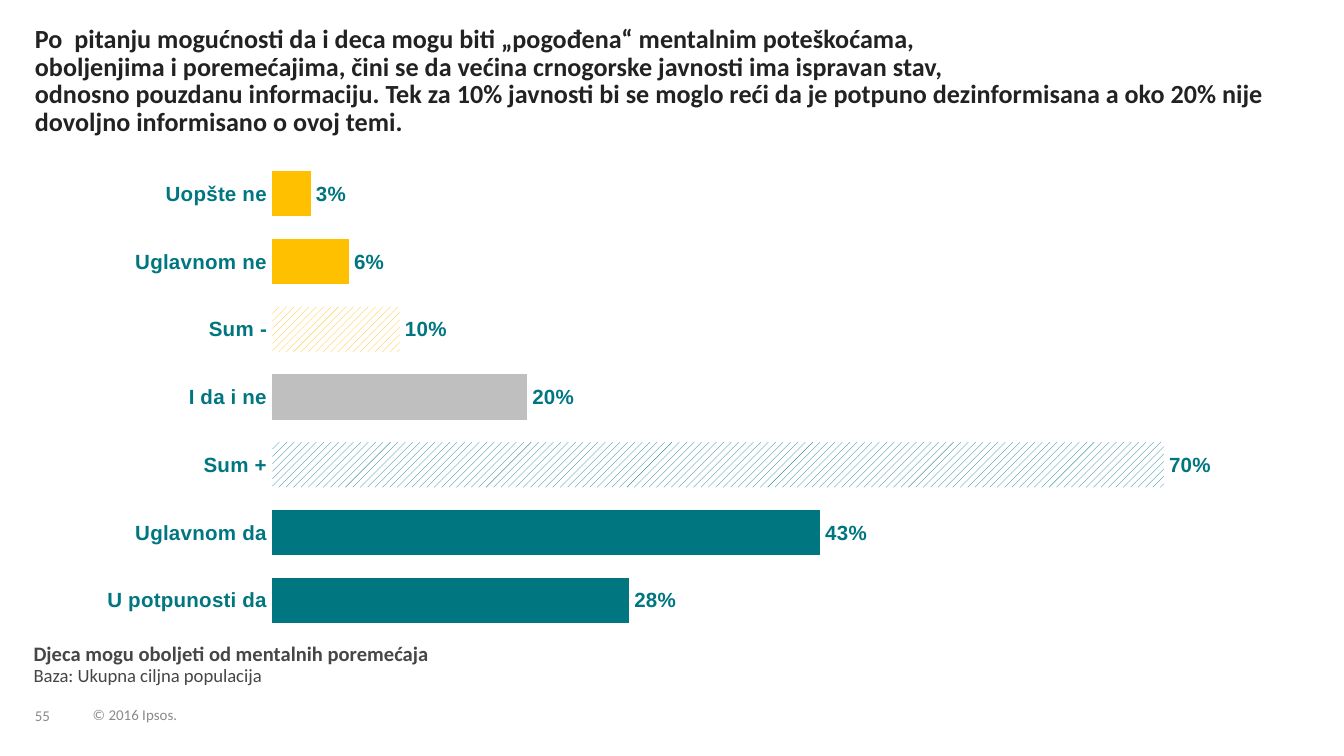
"""Build the survey slide on children and mental health: title, bar chart, base and footer."""
from copy import deepcopy

from lxml import etree
from pptx import Presentation
from pptx import util as u
from pptx.chart.data import CategoryChartData
from pptx.dml.color import RGBColor
from pptx.enum import chart as ch, dml, text
from pptx.oxml.ns import qn

WIDTH = 10
HEIGHT = WIDTH * 9 / 16
COLS = ROWS = 100
LEFT, FULL = 2.6, 95
COLORS = {"title": "222223", "note": "444647", "footer": "888B8D",
          "yes": "007681", "no": "FFC000", "neutral": "BFBFBF", "white": "FFFFFF"}
ANSWERS = [("Uopšte ne", 3, "no", False), ("Uglavnom ne", 6, "no", False),
           ("Sum -", 10, "no", True), ("I da i ne", 20, "neutral", False),
           ("Sum +", 70, "yes", True), ("Uglavnom da", 43, "yes", False),
           ("U potpunosti da", 28, "yes", False)]
TITLE = ("Po  pitanju mogućnosti da i deca mogu biti „pogođena“ mentalnim poteškoćama, "
         "oboljenjima i poremećajima, čini se da većina crnogorske javnosti ima ispravan stav,")
SUBTITLE = ("odnosno pouzdanu informaciju. Tek za 10% javnosti bi se moglo reći da je potpuno "
            "dezinformisana a oko 20% nije dovoljno informisano o ovoj temi.")


def rgb(name):
    return RGBColor.from_string(COLORS[name])


def grid(x, y, w, h):
    col, row = WIDTH / COLS, HEIGHT / ROWS
    return [u.Inches(n) for n in (x * col, y * row, w * col, h * row)]


def style_font(font, size, color, bold=True, name="Calibri"):
    font.name, font.size, font.bold = name, u.Pt(size), bold
    font.color.rgb = rgb(color)


def write(sp, lines, color, spacing, anchor=text.MSO_ANCHOR.TOP, wrap=True):
    tf = sp.text_frame
    tf.margin_left = tf.margin_top = tf.margin_right = tf.margin_bottom = 0
    tf.auto_size = text.MSO_AUTO_SIZE.NONE
    tf.word_wrap, tf.vertical_anchor = wrap, anchor
    p = tf.paragraphs[0]
    p.text = "\v".join(line for line, _, _ in lines)
    p.alignment = text.PP_ALIGN.LEFT
    p.line_spacing = spacing
    p.space_before = p.space_after = u.Pt(0)
    for r, (_, size, bold) in zip(p.runs, lines):
        style_font(r.font, size, color, bold)
    for br, r in zip(p._p.findall(qn("a:br")), p.runs):
        br.append(deepcopy(r._r.rPr))


def add_title(s, box):
    sp = s.shapes.title
    sp.left, sp.top, sp.width, sp.height = grid(*box)
    write(sp, [(TITLE, 14, True)], "title", 0.9)


def add_text(s, box, *args, **kwargs):
    write(s.shapes.add_textbox(*grid(*box)), *args, **kwargs)


def add_footer(s, box, line):
    add_text(s, box, [(line, 8, False)], "footer", 0.85,
             anchor=text.MSO_ANCHOR.BOTTOM, wrap=False)


def place_plot(chart, **percents):
    area = chart.plots[0]._element.getparent()
    for old in area.findall(qn("c:layout")):
        area.remove(old)
    layout = etree.Element(qn("c:layout"))
    manual = etree.SubElement(layout, qn("c:manualLayout"))
    values = {"layoutTarget": "inner", "xMode": "edge", "yMode": "edge"}
    values.update({tag: percent / 100 for tag, percent in percents.items()})
    for tag, value in values.items():
        etree.SubElement(manual, qn(f"c:{tag}")).set("val", str(value))
    area.insert(0, layout)


def paint(fill, color, hatched):
    if hatched:
        fill.patterned()
        fill.pattern = dml.MSO_PATTERN.WIDE_UPWARD_DIAGONAL
        fill.fore_color.rgb, fill.back_color.rgb = rgb(color), rgb("white")
    else:
        fill.solid()
        fill.fore_color.rgb = rgb(color)


def add_chart(s, box):
    data = CategoryChartData(number_format='0"%"')
    data.categories = [answer[0] for answer in ANSWERS]
    data.add_series("Series 1", [answer[1] for answer in ANSWERS])
    chart = s.shapes.add_chart(ch.XL_CHART_TYPE.BAR_CLUSTERED, *grid(*box), data).chart
    chart.has_legend = chart.has_title = False
    style_font(chart.font, 11, "yes", name="Arial")

    axis = chart.category_axis
    axis.reverse_order = True
    axis.major_tick_mark = ch.XL_TICK_MARK.NONE
    axis.format.line.fill.background()
    style_font(axis.tick_labels.font, 11, "yes", name="Arial")
    axis = chart.value_axis
    axis.visible = axis.has_major_gridlines = False
    axis.minimum_scale, axis.maximum_scale = 0, 80

    plot = chart.plots[0]
    plot.gap_width, plot.vary_by_categories = 50, False
    plot.has_data_labels = True
    labels = plot.data_labels
    labels.show_value = True
    labels.number_format, labels.number_format_is_linked = '0"%"', False
    labels.position = ch.XL_LABEL_POSITION.OUTSIDE_END
    style_font(labels.font, 11, "yes", name="Arial")
    for i, (_, _, color, hatched) in enumerate(ANSWERS):
        paint(plot.series[0].points[i].format.fill, color, hatched)
    place_plot(chart, x=18.6, y=2.4, w=79.8, h=95.6)


def main():
    prs = Presentation()
    prs.slide_width, prs.slide_height = u.Inches(WIDTH), u.Inches(HEIGHT)
    s = prs.slides.add_slide(prs.slide_layouts[5])
    add_title(s, (LEFT, 3.4, 71.7, 7.5))
    add_text(s, (LEFT, 10.7, FULL, 7.5), [(SUBTITLE, 14, True)], "title", 0.9)
    add_chart(s, (LEFT, 19.6, FULL, 65.6))
    add_text(s, (2.5, 85, FULL, 8.4),
             [("Djeca mogu oboljeti od mentalnih poremećaja", 11, True),
              ("Baza: Ukupna ciljna populacija", 10, False)], "note", 0.95)
    add_footer(s, (LEFT, 91.2, 3.4, 4.6), "55")
    add_footer(s, (6.9, 92.5, 7.6, 3.2), "© 2016 Ipsos.")
    prs.save("out.pptx")


if __name__ == "__main__":
    main()
